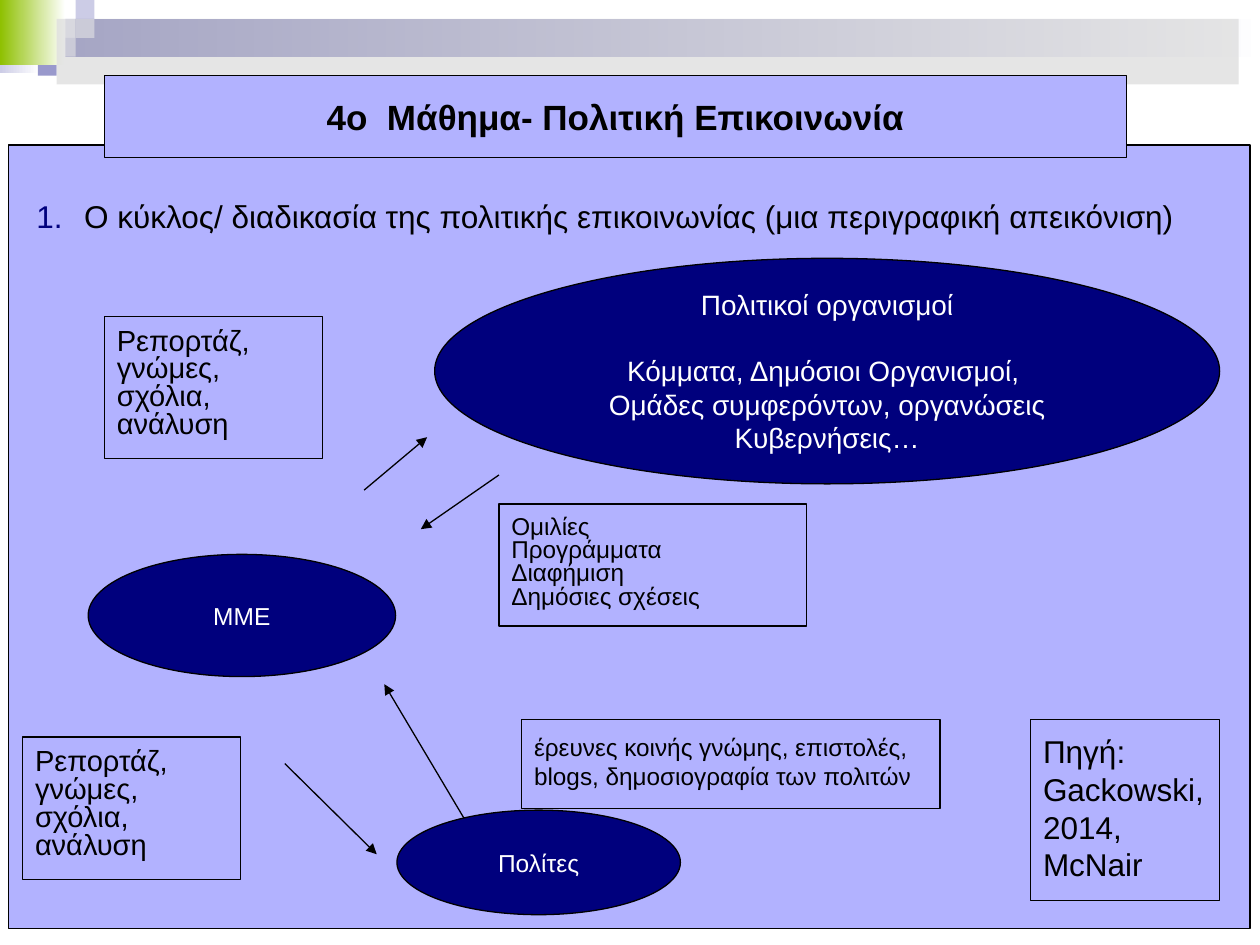
from dataclasses import dataclass

from lxml.etree import SubElement
from pptx import Presentation
from pptx.dml.color import RGBColor
from pptx.enum.shapes import MSO_CONNECTOR, MSO_SHAPE
from pptx.enum.text import MSO_ANCHOR, PP_ALIGN
from pptx.oxml.ns import qn
from pptx.util import Inches, Pt


@dataclass(frozen=True)
class Theme:
    font: str = "Arial"
    black: str = "000000"
    white: str = "FFFFFF"
    navy: str = "00007D"
    lavender: str = "B2B2FF"
    pale: str = "CCCCE6"
    violet: str = "9999CC"
    green: str = "8EC000"
    grey: str = "DDDDDD"
    title: float = 20
    body: float = 18
    report: float = 16.6
    organisation: float = 16
    actor: float = 14
    note: float = 13.9
    line: float = 0.75


theme = Theme()
rgb = RGBColor.from_string


def add_block(box, fill, outline=None, kind=MSO_SHAPE.RECTANGLE):
    """Add a filled shape; a pair of colours gives a left-to-right gradient."""
    shape = slide.shapes.add_shape(kind, *map(Inches, box))
    shape.shadow.inherit = False
    if isinstance(fill, tuple):
        shape.fill.gradient()
        shape.fill.gradient_angle = 0
        for stop, color in zip(shape.fill.gradient_stops, fill):
            stop.color.rgb = rgb(color)
    else:
        shape.fill.solid()
        shape.fill.fore_color.rgb = rgb(fill)
    if outline:
        shape.line.color.rgb = rgb(outline)
        shape.line.width = Pt(theme.line)
    else:
        shape.line.fill.background()
    return shape


def write_text(shape, lines, size, color=theme.black, bold=False, anchor=MSO_ANCHOR.TOP,
               margin=0.1, **paragraph_format):
    frame = shape.text_frame
    frame_format = {"word_wrap": True, "vertical_anchor": anchor,
                    "margin_left": Inches(0.1), "margin_right": Inches(0.1),
                    "margin_top": Inches(margin), "margin_bottom": Inches(0.05)}
    for name, value in frame_format.items():
        setattr(frame, name, value)
    frame.text = "\n".join(lines)
    for paragraph in frame.paragraphs:
        for name, value in ({"alignment": PP_ALIGN.LEFT} | paragraph_format).items():
            setattr(paragraph, name, value)
        font = paragraph.runs[0].font
        for name, value in {"name": theme.font, "size": Pt(size), "bold": bold}.items():
            setattr(font, name, value)
        font.color.rgb = rgb(color)
    return frame.paragraphs


presentation = Presentation()
presentation.slide_width, presentation.slide_height = Inches(10), Inches(7.5)
slide = presentation.slides.add_slide(presentation.slide_layouts[6])

# Header decoration
add_block((0, 0, 0.31, 0.58), (theme.pale, theme.white))
add_block((0.45, 0.15, 9.55, 0.3), (theme.navy, theme.white))
squares = [(0.45, 0.15, theme.pale), (0.6, 0, theme.pale), (0.6, 0.15, theme.violet),
           (0.3, 0.3, theme.pale), (0.14, 0.15, theme.navy), (0.45, 0.3, theme.violet),
           (0.3, 0.45, theme.violet)]
for left, top, color in squares:
    add_block((left, top, 0.15, 0.15), color)
add_block((0, 0, 0.52, 0.52), (theme.green, theme.white))
veil = add_block((0.45, 0.15, 9.38, 0.52), theme.grey)
veil_color = veil.fill._xPr.find(qn("a:solidFill"))[0]
SubElement(veil_color, qn("a:alpha"), val="75000")

# Body panel with its numbered heading
panel = add_block((0.07, 1.15, 9.85, 6.22), theme.lavender, theme.black)
heading = write_text(
    panel,
    ["Ο κύκλος/ διαδικασία της πολιτικής επικοινωνίας (μια περιγραφική απεικόνιση)"],
    theme.body, margin=0.41, alignment=PP_ALIGN.JUSTIFY)[0]
properties = heading._p.get_or_add_pPr()
properties.set("marL", str(Inches(0.5)))
properties.set("indent", str(Inches(-0.38)))
bullet_color = SubElement(properties, qn("a:buClr"))
SubElement(bullet_color, qn("a:srgbClr"), val=theme.navy)
SubElement(properties, qn("a:buFont"), typeface=theme.font)
SubElement(properties, qn("a:buAutoNum"), type="arabicPeriod")

title = add_block((0.83, 0.6, 8.11, 0.65), theme.lavender, theme.black)
write_text(title, ["4ο  Μάθημα- Πολιτική Επικοινωνία"], theme.title, bold=True,
           anchor=MSO_ANCHOR.MIDDLE, margin=0.05, alignment=PP_ALIGN.CENTER)

# Arrows between the actors
arrows = [((3.96, 3.77), (3.34, 4.2)), ((2.89, 3.89), (3.39, 3.47)),
          ((2.26, 6.06), (2.99, 6.78)), ((3.71, 6.54), (3.05, 5.43))]
for start, end in arrows:
    arrow = slide.shapes.add_connector(MSO_CONNECTOR.STRAIGHT, *map(Inches, start + end))
    arrow.line.color.rgb = rgb(theme.black)
    arrow.line.width = Pt(theme.line)
    SubElement(arrow.line._get_or_add_ln(), qn("a:tailEnd"), type="triangle")
    SubElement(arrow._element.spPr, qn("a:effectLst"))

# Actors
actors = [
    ((3.45, 2.05, 6.23, 1.79), theme.organisation,
     ["Πολιτικοί οργανισμοί", "Κόμματα, Δημόσιοι Οργανισμοί, ",
      "Ομάδες συμφερόντων, οργανώσεις", "Κυβερνήσεις…"]),
    ((0.7, 4.4, 2.44, 0.97), theme.actor, ["ΜΜΕ"]),
    ((3.15, 6.43, 2.25, 0.83), theme.actor, ["Πολίτες"]),
]
for box, size, lines in actors:
    ellipse = add_block(box, theme.navy, theme.black, MSO_SHAPE.OVAL)
    paragraphs = write_text(ellipse, lines, size, theme.white, anchor=MSO_ANCHOR.MIDDLE,
                            margin=0.05, alignment=PP_ALIGN.CENTER)
    if len(paragraphs) > 1:
        paragraphs[1].space_before = Pt(1.15 * size)

# Notes on what passes between them
reporting = ["Ρεπορτάζ, γνώμες, σχόλια, ανάλυση"]
notes = [
    ((0.83, 2.51, 1.73, 1.13), theme.report, 0.8, reporting),
    ((0.18, 5.85, 1.73, 1.13), theme.report, 0.8, reporting),
    ((3.96, 4, 2.44, 0.97), theme.note, 0.8,
     ["Ομιλίες", "Προγράμματα", "Διαφήμιση", "Δημόσιες σχέσεις"]),
    ((4.14, 5.71, 3.32, 0.71), theme.note, 1.0,
     ["έρευνες κοινής γνώμης, επιστολές, blogs, δημοσιογραφία των πολιτών"]),
    ((8.18, 5.71, 1.5, 1.44), theme.body, 1.0, ["Πηγή: Gackowski, 2014, McNair"]),
]
for box, size, spacing, lines in notes:
    note = add_block(box, theme.lavender, theme.black)
    write_text(note, lines, size, line_spacing=spacing)

presentation.save("out.pptx")
